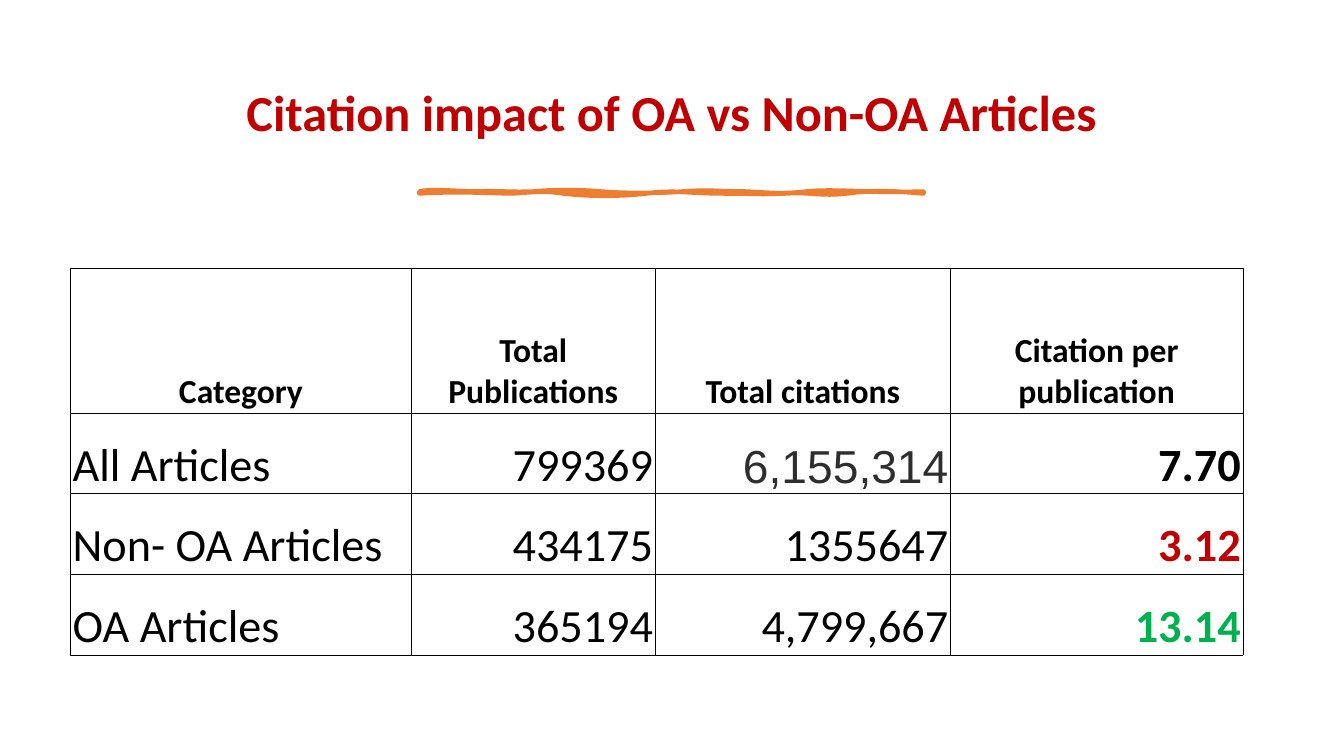
import pptx
import pptx.dml.color
import pptx.enum.text
import pptx.oxml
import pptx.oxml.ns
import pptx.util
from lxml import etree

Pt = pptx.util.Pt
ALIGN = pptx.enum.text.PP_ALIGN
ANCHOR = pptx.enum.text.MSO_ANCHOR
qn = pptx.oxml.ns.qn

COLORS = {"black": "000000", "red": "C00000", "green": "00B050",
          "gray": "2E2E2E", "orange": "ED7D31"}

HEADERS = ["Category", "Total Publications", "Total citations", "Citation per publication"]
ROWS = [["All Articles", "799369", "6,155,314", "7.70"],
        ["Non- OA Articles", "434175", "1355647", "3.12"],
        ["OA Articles", "365194", "4,799,667", "13.14"]]
RATE_COLORS = ["black", "red", "green"]
COL_WIDTHS = [243.4, 174.2, 211, 208.8]
ROW_HEIGHTS = [103.7, 57.6, 57.6, 57.6]

# Brush stroke outline: cubic curves (control, control, end) from its left end
STROKE_CURVES = [
    ((8.6, -2.2), (27.4, 0), (41, 0)),
    ((54.7, -0.7), (67, 0.7), (81.4, 0)),
    ((95.8, -1.4), (113.8, -1.4), (129.6, 0)),
    ((144.7, 1.4), (170.6, 1.4), (187.9, 0)),
    ((205.9, -1.4), (214.6, 0), (232.6, 0)),
    ((249.8, 0.7), (257.8, 2.2), (276.5, 0)),
    ((295.2, -2.2), (324.7, 1.4), (360, 0)),
    ((360.7, 0.7), (360, 0.7), (360, 1.4)),
    ((344.9, 0), (323.3, -1.4), (305.3, 1.4)),
    ((287.3, 3.6), (277.2, 0), (261.4, 1.4)),
    ((244.8, 2.2), (238.3, 1.4), (216.7, 1.4)),
    ((195.1, 1.4), (180.7, -1.4), (162, 1.4)),
    ((142.6, 3.6), (121.7, 3.6), (103, 1.4)),
    ((85, -1.4), (77, 1.4), (62.6, 1.4)),
    ((48.2, 0.7), (15.8, 0), (0, 1.4)),
]


def rgb(name):
    return pptx.dml.color.RGBColor.from_string(COLORS[name])


def add_run(p, text, size, color="black", bold=False, font="Calibri"):
    r = p.add_run()
    r.text = text
    r.font.name = font
    r.font.size = Pt(size)
    r.font.bold = bold
    r.font.color.rgb = rgb(color)


def add_title(slide, left, top, width, height):
    sp = slide.shapes.title
    sp.left, sp.top, sp.width, sp.height = Pt(left), Pt(top), Pt(width), Pt(height)
    tf = sp.text_frame
    tf.word_wrap = True
    tf.vertical_anchor = ANCHOR.MIDDLE
    p = tf.paragraphs[0]
    p.alignment = ALIGN.CENTER
    p.line_spacing = 0.9
    add_run(p, "Citation impact of OA vs Non-OA Articles", 36, "red", True)


def curve_points(start, curves, steps=8):
    """Sample a chain of cubic curves into points."""
    points = []
    for c1, c2, end in curves:
        for i in range(1, steps + 1):
            t = i / steps
            weights = ((1 - t) ** 3, 3 * t * (1 - t) ** 2, 3 * t * t * (1 - t), t ** 3)
            points.append(tuple(sum(w * v for w, v in zip(weights, axis))
                                for axis in zip(start, c1, c2, end)))
        start = end
    return points


def add_brush_stroke(slide, left, top):
    builder = slide.shapes.build_freeform(Pt(left), Pt(top), scale=1.0)
    builder.add_line_segments([(Pt(left + x), Pt(top + y))
                               for x, y in curve_points((0, 0), STROKE_CURVES)], close=True)
    sp = builder.convert_to_shape()
    sp.shadow.inherit = False
    sp.fill.solid()
    sp.fill.fore_color.rgb = rgb("orange")
    sp.line.color.rgb = rgb("orange")
    sp.line.width = Pt(3.25)
    etree.SubElement(sp.line._get_or_add_ln(), qn("a:round"))


def add_borders(cell):
    tc_pr = cell._tc.get_or_add_tcPr()
    for side in "LRTB":
        ln = etree.SubElement(tc_pr, qn(f"a:ln{side}"), w=str(Pt(0.5)))
        fill = etree.SubElement(ln, qn("a:solidFill"))
        etree.SubElement(fill, qn("a:srgbClr"), val=COLORS["black"])


def fill_cell(cell, text, align, **run_format):
    add_borders(cell)
    cell.fill.background()
    cell.vertical_anchor = ANCHOR.BOTTOM
    cell.margin_left = cell.margin_right = cell.margin_top = Pt(1.5)
    cell.margin_bottom = 0
    p = cell.text_frame.paragraphs[0]
    p.alignment = align
    add_run(p, text, **run_format)


def add_citation_table(slide, left, top):
    frame = slide.shapes.add_table(len(ROW_HEIGHTS), len(COL_WIDTHS), Pt(left), Pt(top),
                                   Pt(sum(COL_WIDTHS)), Pt(sum(ROW_HEIGHTS)))
    table = frame.table
    table.first_row = table.horz_banding = False
    for column, width in zip(table.columns, COL_WIDTHS):
        column.width = Pt(width)
    for row, height in zip(table.rows, ROW_HEIGHTS):
        row.height = Pt(height)
    for c, text in enumerate(HEADERS):
        fill_cell(table.cell(0, c), text, ALIGN.CENTER, size=24, bold=True)
    for r, (values, rate_color) in enumerate(zip(ROWS, RATE_COLORS), 1):
        for c, text in enumerate(values):
            look = {"size": 33}
            if c == 3:
                look.update(color=rate_color, bold=True)
            elif (r, c) == (1, 2):
                look.update(color="gray", font="Arial")
            fill_cell(table.cell(r, c), text, ALIGN.RIGHT if c else ALIGN.LEFT, **look)


def main():
    prs = pptx.Presentation()
    prs.slide_width, prs.slide_height = Pt(960), Pt(540)
    slide = prs.slides.add_slide(prs.slide_layouts[5])
    add_title(slide, 50.4, 33.1, 859, 98.6)
    add_brush_stroke(slide, 299.5, 136.8)
    add_citation_table(slide, 50.4, 191.3)
    prs.save("out.pptx")


if __name__ == "__main__":
    main()
